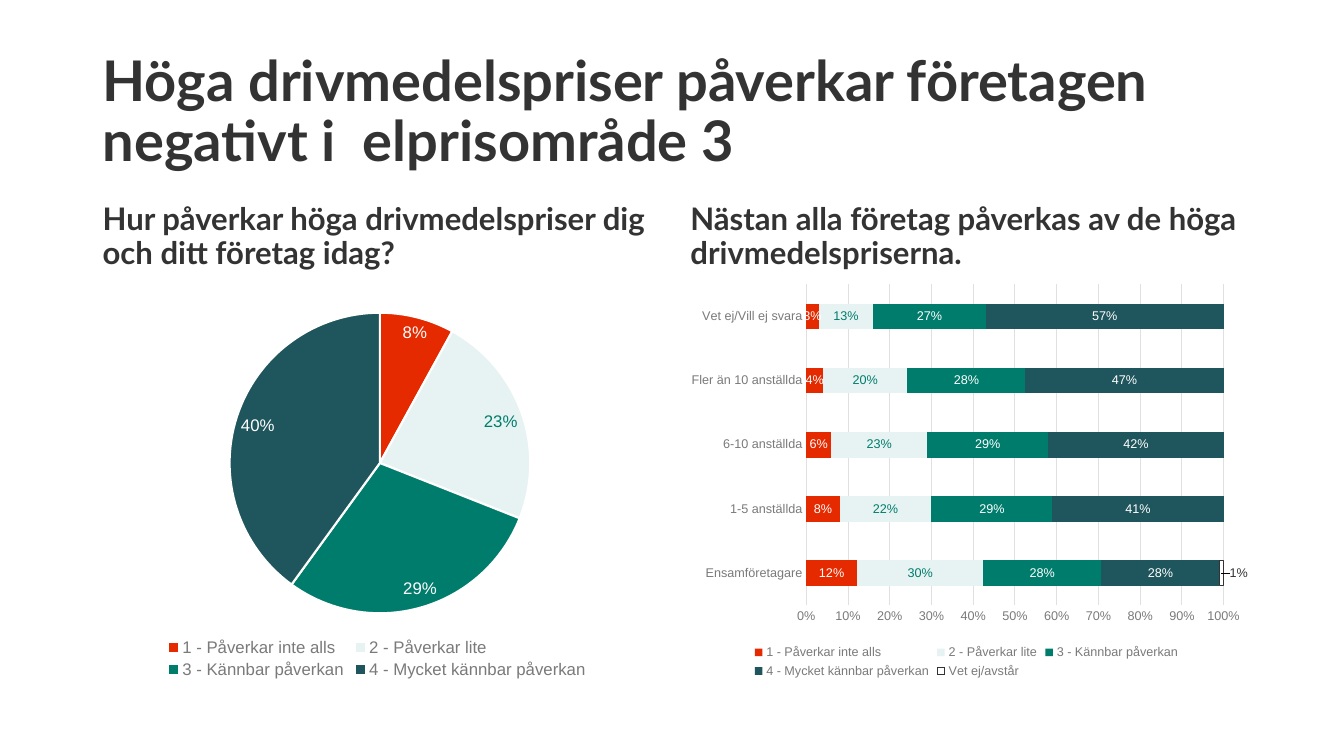
from lxml import etree
from pptx import Presentation
from pptx.chart.data import CategoryChartData
from pptx.dml.color import RGBColor
from pptx.enum.chart import XL_CHART_TYPE, XL_LABEL_POSITION, XL_LEGEND_POSITION, XL_TICK_MARK
from pptx.enum.text import MSO_ANCHOR
from pptx.oxml.ns import qn
from pptx.util import Inches, Pt

PIE, STACKED = XL_CHART_TYPE.PIE, XL_CHART_TYPE.BAR_STACKED_100
CENTER, BEST_FIT = XL_LABEL_POSITION.CENTER, XL_LABEL_POSITION.BEST_FIT
BOTTOM, NO_TICK = XL_LEGEND_POSITION.BOTTOM, XL_TICK_MARK.NONE
MIDDLE, LOW = MSO_ANCHOR.MIDDLE, MSO_ANCHOR.BOTTOM
COLORS = {
    "text": "333333", "muted": "7A7A7A", "grid": "E0E0E0", "white": "FFFFFF",
    "red": "E52A00", "mint": "E6F3F2", "green": "007C6C", "petrol": "1F555C",
}
PERCENT = "###0%"
PERCENT_NO_ZERO = "###0%;;"
ANSWERS = ["1 - Påverkar inte alls", "2 - Påverkar lite",
           "3 - Kännbar påverkan", "4 - Mycket kännbar påverkan"]
FILLS = ["red", "mint", "green", "petrol", "white"]
LABEL_COLORS = ["white", "green", "white", "white", "text"]
ALL_COMPANIES = [0.08, 0.23, 0.29, 0.4]
SIZES = ["Ensamföretagare", "1-5 anställda", "6-10 anställda",
         "Fler än 10 anställda", "Vet ej/Vill ej svara"]
BY_SIZE = [
    [0.12, 0.08, 0.06, 0.04, 0.03],
    [0.3, 0.22, 0.23, 0.2, 0.13],
    [0.28, 0.29, 0.29, 0.28, 0.27],
    [0.28, 0.41, 0.42, 0.47, 0.57],
    [0.01, 0, 0, 0, 0],
]


def rgb(name):
    """Return the named colour."""
    return RGBColor.from_string(COLORS[name])


def set_font(font, size, color, name="Arial", bold=False):
    """Apply size, colour, typeface and weight."""
    font.size, font.name, font.bold = Pt(size), name, bold
    font.color.rgb = rgb(color)


def add_heading(slide, text, box, size, anchor):
    """Add a bold heading in a wrapping text box."""
    frame = slide.shapes.add_textbox(*map(Inches, box)).text_frame
    frame.word_wrap = True
    frame.vertical_anchor = anchor
    paragraph = frame.paragraphs[0]
    paragraph.text = text
    paragraph.line_spacing = 0.9
    set_font(paragraph.font, size, "text", "Lato", True)


def make_layout(**settings):
    """Build a manual chart layout element."""
    layout = etree.Element(qn("c:layout"))
    manual = etree.SubElement(layout, qn("c:manualLayout"))
    for key, value in settings.items():
        etree.SubElement(manual, qn(f"c:{key}")).set("val", str(value))
    return layout


def add_chart(slide, kind, box, categories, series, legend_size, plot_box):
    """Add a chart with a bottom legend and a fixed plot area."""
    data = CategoryChartData(number_format=PERCENT)
    data.categories = categories
    for name, values in series:
        data.add_series(name, values)
    chart = slide.shapes.add_chart(kind, *map(Inches, box), data).chart
    chart.has_title = False
    set_font(chart.font, 10, "text")
    chart.has_legend = True
    chart.legend.position = BOTTOM
    chart.legend.include_in_layout = False
    set_font(chart.legend.font, legend_size, "muted")
    area = chart.element.find(".//" + qn("c:plotArea"))
    for old in area.findall(qn("c:layout")):
        area.remove(old)
    x, y, w, h = plot_box
    area.insert(0, make_layout(layoutTarget="inner", xMode="edge", yMode="edge",
                               x=x, y=y, w=w, h=h))
    return chart


def paint(item, color, line=None, width=0.75):
    """Fill a series or point and set its outline."""
    item.format.fill.solid()
    item.format.fill.fore_color.rgb = rgb(color)
    if line:
        item.format.line.color.rgb = rgb(line)
        item.format.line.width = Pt(width)


def show_values(labels, size, color, position, number_format=PERCENT):
    """Show percentage labels."""
    labels.show_value = True
    labels.number_format = number_format
    labels.number_format_is_linked = False
    labels.position = position
    set_font(labels.font, size, color)


def add_answer_pie(slide):
    """Add the pie of answers from all companies."""
    chart = add_chart(slide, PIE, (0.92, 2.74, 5.64, 4.03), ANSWERS,
                      [("Series 1", ALL_COMPANIES)], 12, (0.24, 0.09, 0.53, 0.74))
    plot = chart.plots[0]
    plot.vary_by_categories = True
    series = plot.series[0]
    show_values(series.data_labels, 12, "white", BEST_FIT)
    for index, color in enumerate(FILLS[:len(ANSWERS)]):
        paint(series.points[index], color, "white", 1.5)
    lite_label = series.points[1].data_label
    set_font(lite_label.font, 12, "green")
    lite_label.position = BEST_FIT


def style_axes(chart):
    """Style the company size axis and the percentage axis."""
    for axis in (chart.category_axis, chart.value_axis):
        axis.major_tick_mark = axis.minor_tick_mark = NO_TICK
        set_font(axis.tick_labels.font, 9, "muted")
    axis = chart.value_axis
    axis.minimum_scale, axis.maximum_scale, axis.major_unit = 0, 1, 0.1
    axis.tick_labels.number_format = PERCENT
    axis.tick_labels.number_format_is_linked = False
    axis.format.line.fill.background()
    for line in (chart.category_axis.format.line, axis.major_gridlines.format.line):
        line.color.rgb = rgb("grid")
        line.width = Pt(0.75)


def add_size_bars(slide):
    """Add the stacked bars of answers by company size."""
    names = ANSWERS + ["Vet ej/avstår"]
    chart = add_chart(slide, STACKED, (6.75, 2.74, 5.67, 4.03), SIZES,
                      list(zip(names, BY_SIZE)), 9, (0.22, 0.02, 0.73, 0.79))
    style_axes(chart)
    plot = chart.plots[0]
    plot.vary_by_categories = False
    plot.gap_width, plot.overlap = 150, 100
    for series, fill, color in zip(plot.series, FILLS, LABEL_COLORS):
        paint(series, fill, "text" if fill == "white" else None)
        show_values(series.data_labels, 9, color, CENTER, PERCENT_NO_ZERO)
    unsure = plot.series[len(ANSWERS)]
    label = unsure.points[0].data_label
    set_font(label.font, 9, "text")
    label.position = CENTER
    index = unsure.data_labels._element.find(qn("c:dLbl")).find(qn("c:idx"))
    index.addnext(make_layout(x=0.03, y=0))


def main():
    """Build and save the slide."""
    presentation = Presentation()
    presentation.slide_width, presentation.slide_height = Inches(13.33), Inches(7.5)
    slide = presentation.slides.add_slide(presentation.slide_layouts[6])
    add_heading(slide, "Höga drivmedelspriser påverkar företagen negativt i  elprisområde 3",
                (0.92, 0.4, 11.5, 1.45), 40, MIDDLE)
    add_heading(slide, "Hur påverkar höga drivmedelspriser dig och ditt företag idag?",
                (0.92, 1.84, 5.64, 0.9), 22.2, LOW)
    add_heading(slide, "Nästan alla företag påverkas av de höga drivmedelspriserna.",
                (6.75, 1.84, 5.67, 0.9), 22.2, LOW)
    add_answer_pie(slide)
    add_size_bars(slide)
    presentation.save("out.pptx")


if __name__ == "__main__":
    main()
